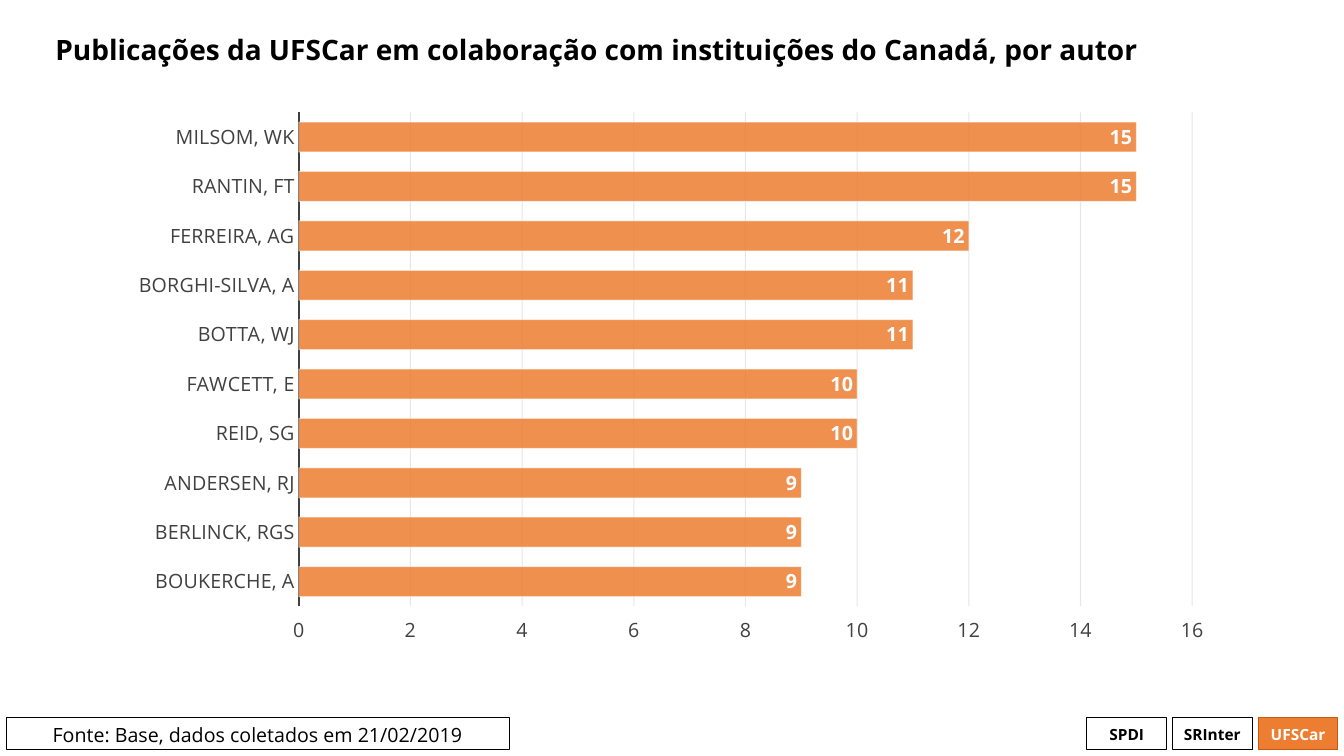
from lxml import etree
from pptx import Presentation
from pptx import util as u
from pptx.chart.data import CategoryChartData
from pptx.dml.color import RGBColor
from pptx.enum import chart as ch, shapes, text
from pptx.oxml import parse_xml
from pptx.oxml.ns import nsdecls, qn

FONT = "Open Sans"


def paint(font, size, color, bold=False):
    font.name, font.size, font.bold = FONT, u.Pt(size), bold
    font.color.rgb = RGBColor.from_string(color)


def ink(fmt, color, alpha=100):
    """Give a fill or line format a solid colour, alpha in percent."""
    fmt.solid()
    fmt.fore_color.rgb = RGBColor.from_string(color)
    if alpha < 100:
        clr = fmt._xPr.find(qn("a:solidFill"))[0]
        etree.SubElement(clr, qn("a:alpha")).set("val", str(alpha * 1000))


prs = Presentation()
prs.slide_width, prs.slide_height = u.Inches(13.33), u.Inches(7.5)
slide = prs.slides.add_slide(prs.slide_layouts[6])

# Footer: source note and three tabs
TOP, MID = text.MSO_ANCHOR.TOP, text.MSO_ANCHOR.MIDDLE
boxes = [(0.06, 4.99, "Fonte: Base, dados coletados em 21/02/2019", 14, TOP)]
for i, name in enumerate(["SPDI", "SRInter", "UFSCar"]):
    boxes.append((10.78 + 0.85 * i, 0.79, name, 11, MID))

for left, width, words, size, anchor in boxes:
    box = slide.shapes.add_shape(
        shapes.MSO_SHAPE.RECTANGLE, u.Inches(left), u.Inches(7.12),
        u.Inches(width), u.Inches(0.32))
    box.shadow.inherit = False
    box.line.width = u.Pt(0.75)
    active = words == "UFSCar"
    if active:
        ink(box.fill, "ED7D31")
    else:
        box.fill.background()
    ink(box.line.fill, "C55A11" if active else "000000")
    frame = box.text_frame
    frame.word_wrap = True
    frame.vertical_anchor = anchor
    if anchor == MID:
        frame.margin_left = frame.margin_right = 0
    par = frame.paragraphs[0]
    par.text = words
    par.alignment = text.PP_ALIGN.CENTER
    paint(par.font, size, "FFFFFF" if active else "000000", anchor == MID)

# Title
title = slide.shapes.add_textbox(
    u.Inches(0.45), u.Inches(0.06), u.Inches(12.41), u.Inches(0.91))
frame = title.text_frame
frame.word_wrap = True
frame.vertical_anchor = MID
par = frame.paragraphs[0]
par.text = ("Publicações da UFSCar em colaboração com "
            "instituições do Canadá, por autor")
par.line_spacing = 0.9
paint(par.font, 20, "000000", True)

# Bar chart
counts = {
    "MILSOM, WK": 15, "RANTIN, FT": 15, "FERREIRA, AG": 12,
    "BORGHI-SILVA, A": 11, "BOTTA, WJ": 11, "FAWCETT, E": 10,
    "REID, SG": 10, "ANDERSEN, RJ": 9, "BERLINCK, RGS": 9,
    "BOUKERCHE, A": 9,
}
data = CategoryChartData()
data.categories = list(counts)
data.add_series("Series 1", list(counts.values()))
left, top, width, height = 1.15, 0.99, 11.02, 5.51
chart = slide.shapes.add_chart(
    ch.XL_CHART_TYPE.BAR_CLUSTERED, u.Inches(left), u.Inches(top),
    u.Inches(width), u.Inches(height), data).chart
chart.has_legend = chart.has_title = False
paint(chart.font, 14, "000000")

cats, vals = chart.category_axis, chart.value_axis
for axis in (cats, vals):
    axis.major_tick_mark = axis.minor_tick_mark = ch.XL_TICK_MARK.NONE
    paint(axis.tick_labels.font, 14, "404040")
cats.reverse_order = True
cats.format.line.width = u.Pt(1.5)
ink(cats.format.line.fill, "404040")
vals.tick_label_position = ch.XL_TICK_LABEL_POSITION.HIGH
vals.minimum_scale, vals.maximum_scale, vals.major_unit = 0, 16, 2
vals.format.line.fill.background()
grid = vals.major_gridlines.format.line
grid.width = u.Pt(0.75)
ink(grid.fill, "0D0D0D", 10)

plot = chart.plots[0]
plot.gap_width = 65
plot.vary_by_categories = False
bars = plot.series[0]
ink(bars.format.fill, "ED7D31", 85)
bars.format.line.width = u.Pt(0.75)
ink(bars.format.line.fill, "FFFFFF", 50)
labels = bars.data_labels
labels.show_value = True
labels.position = ch.XL_LABEL_POSITION.INSIDE_END
paint(labels.font, 14, "FFFFFF", True)

# Fixed inner plot area, as shares of the chart frame
area = chart.element.find(".//" + qn("c:plotArea"))
for old in area.findall(qn("c:layout")):
    area.remove(old)
spots = "".join(f'<c:{key} val="{val}"/>' for key, val in [
    ("layoutTarget", "inner"), ("xMode", "edge"), ("yMode", "edge"),
    ("x", (2.96 - left) / width), ("y", (1.11 - top) / height),
    ("w", 8.87 / width), ("h", 4.91 / height)])
area.insert(0, parse_xml(
    f'<c:layout {nsdecls("c")}><c:manualLayout>{spots}'
    '</c:manualLayout></c:layout>'))

# White chart frame
white = '<a:solidFill><a:srgbClr val="FFFFFF"/></a:solidFill>'
area.getparent().addnext(parse_xml(
    f'<c:spPr {nsdecls("c", "a")}>{white}<a:ln w="9525">{white}</a:ln></c:spPr>'))

prs.save("out.pptx")
